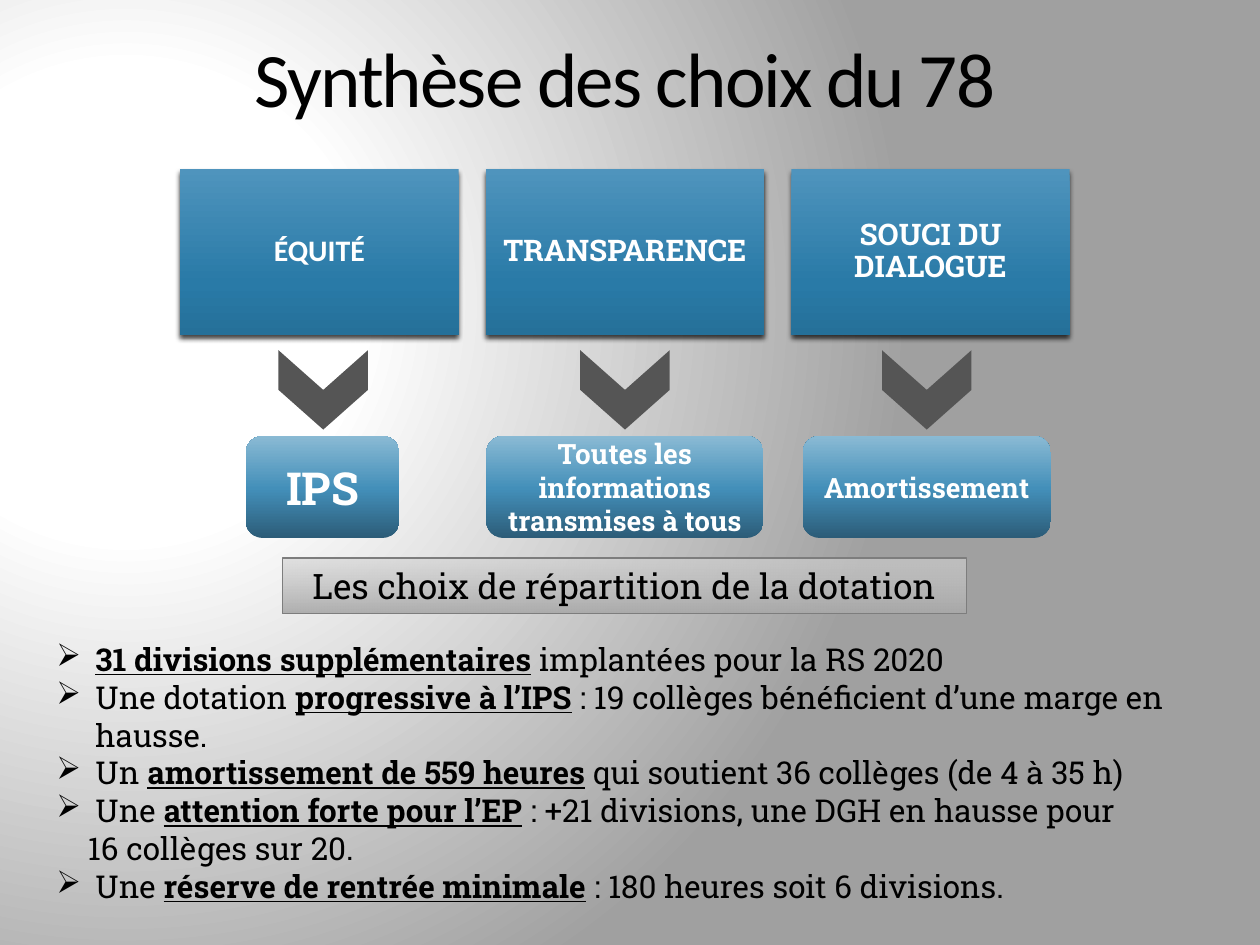
from pptx import Presentation
from pptx.dml.color import RGBColor
from pptx.enum.shapes import MSO_SHAPE
from pptx.enum.text import MSO_ANCHOR, PP_ALIGN
from pptx.oxml import parse_xml
from pptx.oxml.ns import nsdecls, qn
from pptx.util import Inches, Pt

RECT, ROUNDED, CHEVRON = MSO_SHAPE.RECTANGLE, MSO_SHAPE.ROUNDED_RECTANGLE, MSO_SHAPE.CHEVRON
MIDDLE, TOP = MSO_ANCHOR.MIDDLE, MSO_ANCHOR.TOP
CENTER, LEFT = PP_ALIGN.CENTER, PP_ALIGN.LEFT

BLACK = RGBColor(0x00, 0x00, 0x00)
WHITE = RGBColor(0xFF, 0xFF, 0xFF)
DARK_GRAY = RGBColor(0x55, 0x55, 0x55)
BORDER_GRAY = RGBColor(0x7D, 0x7D, 0x7D)
SLAB, SANS = "Roboto Slab", "Calibri"

# Gradient stops: position %, colour, opacity %
BACKGROUND = [(30, WHITE, 100), (100, RGBColor(0xA0, 0xA0, 0xA0), 100)]
PRINCIPLE_BLUE = [(0, RGBColor(0x4F, 0x94, 0xBD), 100),
                  (69, RGBColor(0x29, 0x7A, 0xA7), 100),
                  (100, RGBColor(0x25, 0x70, 0x99), 100)]
MEANS_BLUE = [(0, RGBColor(0x2C, 0x5C, 0x78), 100),
              (48, RGBColor(0x43, 0x8F, 0xB9), 100),
              (100, RGBColor(0x8A, 0xBA, 0xD4), 100)]
BANNER_GRAY = [(0, RGBColor(0xD2, 0xD2, 0xD2), 60),
               (100, RGBColor(0xA9, 0xA9, 0xA9), 92)]

TITLE = "Synthèse des choix du 78"
BANNER = "Les choix de répartition de la dotation"
PRINCIPLES = [("ÉQUITÉ", SANS), ("TRANSPARENCE", SLAB), ("SOUCI DU DIALOGUE", SLAB)]
# text, size, left, width
MEANS = [("IPS", 26, 1.95, 1.22),
         ("Toutes les informations transmises à tous", 16, 3.86, 2.2),
         ("Amortissement", 16, 6.37, 1.97)]
# bulleted, before, emphasis, after
CHOICES = [
    (True, "", "31 divisions supplémentaires", " implantées pour la RS 2020"),
    (True, "Une dotation ", "progressive à l’IPS",
     " : 19 collèges bénéficient d’une marge en hausse."),
    (True, "Un ", "amortissement de 559 heures",
     " qui soutient 36 collèges (de 4 à 35 h)"),
    (True, "Une ", "attention forte pour l’EP",
     " : +21 divisions, une DGH en hausse pour"),
    (False, "16 collèges sur 20.", "", ""),
    (True, "Une ", "réserve de rentrée minimale", " : 180 heures soit 6 divisions."),
]


def set_gradient(fill, parent, stops, direction):
    fill.solid()
    gs = "".join(f'<a:gs pos="{pos * 1000}"><a:srgbClr val="{color}">'
                 f'<a:alpha val="{alpha * 1000}"/></a:srgbClr></a:gs>'
                 for pos, color, alpha in stops)
    solid = parent.find(qn("a:solidFill"))
    parent.replace(solid, parse_xml(
        f'<a:gradFill {nsdecls("a")} rotWithShape="1"><a:gsLst>{gs}</a:gsLst>'
        f'{direction}</a:gradFill>'))


def linear(angle):
    return f'<a:lin ang="{angle * 60000}" scaled="0"/>'


def add_run(p, text, size, font=SLAB, color=BLACK, bold=False, underline=False):
    r = p.add_run()
    r.text = text
    r.font.size, r.font.name = Pt(size), font
    r.font.bold, r.font.underline = bold, underline
    r.font.color.rgb = color
    return r


def set_frame(sp, anchor, align, margin=None):
    """Prepare the text frame and return its first paragraph."""
    tf = sp.text_frame
    tf.word_wrap = True
    tf.vertical_anchor = anchor
    if margin is not None:
        tf.margin_left = tf.margin_right = tf.margin_top = tf.margin_bottom = Inches(margin)
    tf.paragraphs[0].alignment = align
    return tf.paragraphs[0]


def add_box(s, kind, left, top, width, height):
    sp = s.shapes.add_shape(kind, Inches(left), Inches(top), Inches(width), Inches(height))
    sp.shadow.inherit = False
    sp.line.fill.background()
    return sp


def add_shadow(sp):
    sp._element.spPr.find(qn("a:effectLst")).append(parse_xml(
        f'<a:outerShdw {nsdecls("a")} blurRad="{Pt(3)}" dist="{Pt(2)}" dir="5400000" '
        f'rotWithShape="0"><a:srgbClr val="{BLACK}"><a:alpha val="75000"/></a:srgbClr>'
        '</a:outerShdw>'))


def add_textbox(s, left, top, width, height):
    return s.shapes.add_textbox(Inches(left), Inches(top), Inches(width), Inches(height))


def add_choices(s):
    sp = add_textbox(s, 0.35, 5.03, 9.53, 2.22)
    p = set_frame(sp, TOP, LEFT)
    for i, (bulleted, before, emphasis, after) in enumerate(CHOICES):
        if i:
            p = sp.text_frame.add_paragraph()
        pPr = p._p.get_or_add_pPr()
        if bulleted:
            pPr.set("marL", str(Inches(0.31)))
            pPr.set("indent", str(-Inches(0.31)))
            pPr.append(parse_xml(f'<a:buChar {nsdecls("a")} char="➢"/>'))
        else:
            pPr.set("marL", str(Inches(0.25)))
        for text, strong in ((before, False), (emphasis, True), (after, False)):
            if text:
                add_run(p, text, 18, bold=strong, underline=strong)


def main():
    prs = Presentation()
    prs.slide_width, prs.slide_height = Inches(10), Inches(7.5)
    s = prs.slides.add_slide(prs.slide_layouts[6])
    fill = s.background.fill
    set_gradient(fill, s._element.find(".//" + qn("p:bgPr")), BACKGROUND,
                 '<a:path path="circle"><a:fillToRect l="45000" t="65000" '
                 'r="125000" b="100000"/></a:path>')

    p = set_frame(add_textbox(s, 1.1, 0.1, 7.72, 1.13), MIDDLE, CENTER, 0.25)
    p.line_spacing = 0.85
    r = add_run(p, TITLE, 44, SANS)
    r._r.get_or_add_rPr().set("spc", "-110")

    for i, (text, font) in enumerate(PRINCIPLES):
        sp = add_box(s, RECT, 1.43 + i * 2.425, 1.34, 2.21, 1.32)
        set_gradient(sp.fill, sp._element.spPr, PRINCIPLE_BLUE, linear(90))
        add_shadow(sp)
        p = set_frame(sp, MIDDLE, CENTER, 0.07)
        p.line_spacing = 0.9
        add_run(p, text, 17, font, WHITE, bold=True)

        arrow = add_box(s, CHEVRON, 2.25 + i * 2.395, 2.74, 0.63, 0.71)
        arrow.rotation = 90
        arrow.fill.solid()
        arrow.fill.fore_color.rgb = DARK_GRAY

    for text, size, left, width in MEANS:
        sp = add_box(s, ROUNDED, left, 3.46, width, 0.81)
        set_gradient(sp.fill, sp._element.spPr, MEANS_BLUE, linear(270))
        add_run(set_frame(sp, MIDDLE, CENTER), text, size, color=WHITE, bold=True)

    banner = add_box(s, RECT, 2.24, 4.43, 5.43, 0.44)
    set_gradient(banner.fill, banner._element.spPr, BANNER_GRAY, linear(90))
    banner.line.color.rgb = BORDER_GRAY
    banner.line.width = Pt(0.75)
    add_run(set_frame(banner, TOP, CENTER), BANNER, 20)

    add_choices(s)
    prs.save("out.pptx")


if __name__ == "__main__":
    main()
